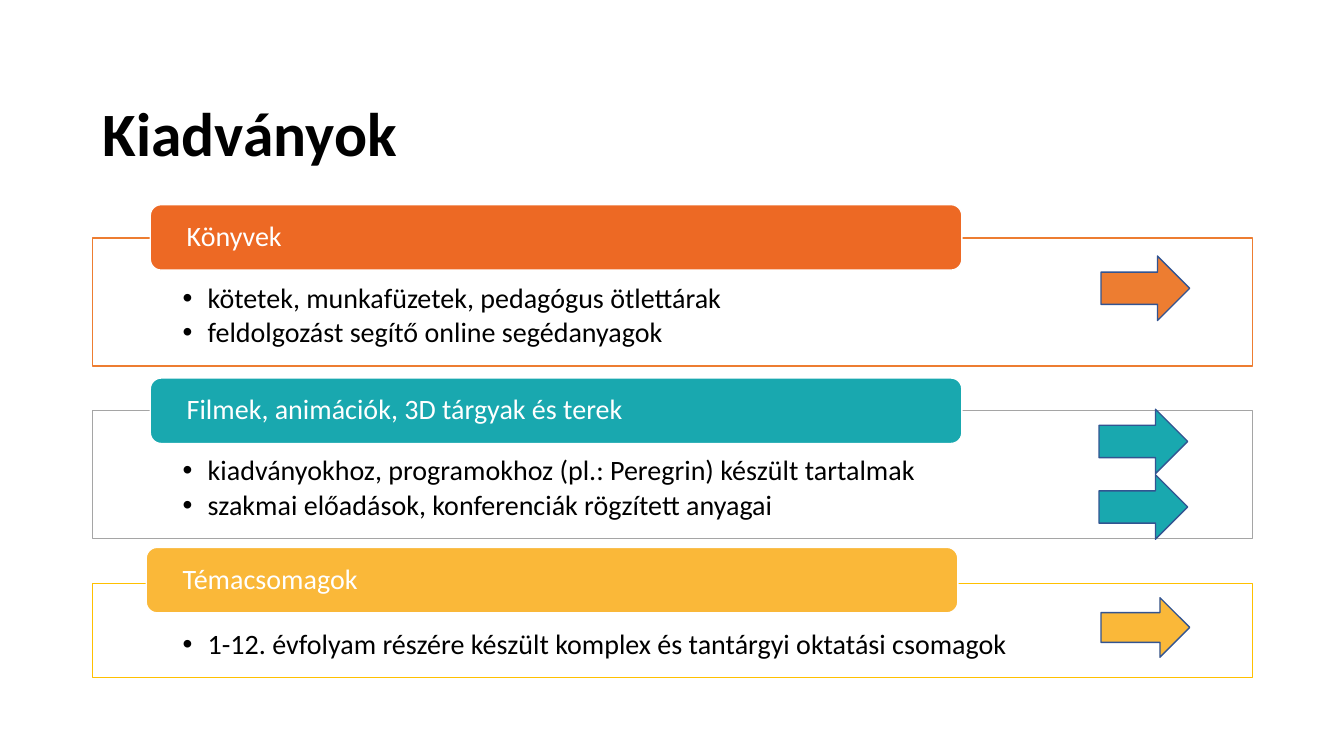
from lxml import etree
from pptx import Presentation
from pptx.dml.color import RGBColor
from pptx.enum import shapes, text
from pptx.oxml import ns
from pptx.util import Inches, Pt

FONT = "Calibri"
COLORS = {
    "black": "000000", "white": "FFFFFF", "arrow_line": "325491",
    "orange": "ED6924", "orange_line": "ED7D31",
    "teal": "19A8AF", "gray_line": "A5A5A5",
    "yellow": "FAB839", "yellow_line": "FFC000",
}
PANEL_LEFT, PANEL_WIDTH = 0.92, 11.5
HEADER_WIDTH, HEADER_HEIGHT = 8.05, 0.65
ARROW_WIDTH = 0.88

# placeholder, panel top and height, header left and top, colours, texts
SECTIONS = [
    (1, 2.36, 1.27, 1.49, 2.03, "orange", "orange_line", "Könyvek",
     ["kötetek, munkafüzetek, pedagógus ötlettárak",
      "feldolgozást segítő online segédanyagok"]),
    (2, 4.07, 1.27, 1.49, 3.75, "teal", "gray_line",
     "Filmek, animációk, 3D tárgyak és terek",
     ["kiadványokhoz, programokhoz (pl.: Peregrin) készült tartalmak",
      "szakmai előadások, konferenciák rögzített anyagai"]),
    (3, 5.79, 0.93, 1.45, 5.43, "yellow", "yellow_line", "Témacsomagok",
     ["1-12. évfolyam részére készült komplex és tantárgyi oktatási csomagok"]),
]

# left, top, height, colour
ARROWS = [
    (10.92, 5.93, 0.59, "yellow"),
    (10.9, 4.06, 0.64, "teal"),
    (10.92, 2.54, 0.64, "orange_line"),
    (10.9, 4.71, 0.64, "teal"),
]


def rgb(name):
    return RGBColor.from_string(COLORS[name])


def place(s, left, top, width, height):
    s.left, s.top = Inches(left), Inches(top)
    s.width, s.height = Inches(width), Inches(height)


def paint(s, fill, line):
    s.fill.solid()
    s.fill.fore_color.rgb = rgb(fill)
    s.line.color.rgb = rgb(line)
    s.line.width = Pt(1)


def add_bullet(p):
    pPr = p._p.get_or_add_pPr()
    pPr.set("marL", str(Inches(0.25)))
    pPr.set("indent", str(Inches(-0.25)))
    etree.SubElement(pPr, ns.qn("a:buFont")).set("typeface", "Arial")
    etree.SubElement(pPr, ns.qn("a:buChar")).set("char", "•")


def write(s, lines, size=20, color="black", bold=False, bullets=False,
          anchor=text.MSO_ANCHOR.MIDDLE, insets=(0.1, 0.05, 0.1, 0.05), after=0):
    tf = s.text_frame
    tf.word_wrap = True
    tf.auto_size = text.MSO_AUTO_SIZE.NONE
    tf.vertical_anchor = anchor
    (tf.margin_left, tf.margin_top,
     tf.margin_right, tf.margin_bottom) = [Inches(i) for i in insets]
    for i, line in enumerate(lines):
        p = tf.add_paragraph() if i else tf.paragraphs[0]
        if bullets:
            add_bullet(p)
        p.alignment = text.PP_ALIGN.LEFT
        p.line_spacing = 0.9
        p.space_before, p.space_after = Pt(0), Pt(after)
        r = p.add_run()
        r.text = line
        r.font.name, r.font.size, r.font.bold = FONT, Pt(size), bold
        r.font.color.rgb = rgb(color)


def add_shape(slide, kind, left, top, width, height, fill, line):
    s = slide.shapes.add_shape(kind, Inches(left), Inches(top),
                               Inches(width), Inches(height))
    s.shadow.inherit = False
    paint(s, fill, line)
    return s


def add_section(slide, idx, top, height, header_left, header_top,
                fill, line, heading, items):
    # Outlined list panel
    panel = slide.placeholders[idx]
    place(panel, PANEL_LEFT, top, PANEL_WIDTH, height)
    paint(panel, "white", line)
    white = panel.fill._xPr.find(".//" + ns.qn("a:srgbClr"))
    etree.SubElement(white, ns.qn("a:alpha")).set("val", "90000")
    write(panel, items, bullets=True, anchor=text.MSO_ANCHOR.TOP,
          insets=(0.89, 0.46, 0.89, 0.16), after=3)
    # Coloured heading over the panel's top edge
    header = add_shape(slide, shapes.MSO_SHAPE.ROUNDED_RECTANGLE, header_left,
                       header_top, HEADER_WIDTH, HEADER_HEIGHT, fill, "white")
    write(header, [heading], color="white", insets=(0.33, 0, 0.33, 0))


def main():
    prs = Presentation()
    prs.slide_width, prs.slide_height = Inches(13.33), Inches(7.5)
    slide = prs.slides.add_slide(prs.slide_layouts.get_by_name("Comparison"))

    # Title
    title = slide.shapes.title
    place(title, PANEL_LEFT, 0.86, PANEL_WIDTH, 0.99)
    write(title, ["Kiadványok"], size=44, bold=True)

    # Sections
    for section in SECTIONS:
        add_section(slide, *section)
    unused = slide.placeholders[4].element
    unused.getparent().remove(unused)

    # Arrows
    for left, top, height, color in ARROWS:
        add_shape(slide, shapes.MSO_SHAPE.RIGHT_ARROW, left, top,
                  ARROW_WIDTH, height, color, "arrow_line")

    prs.save("out.pptx")


if __name__ == "__main__":
    main()
